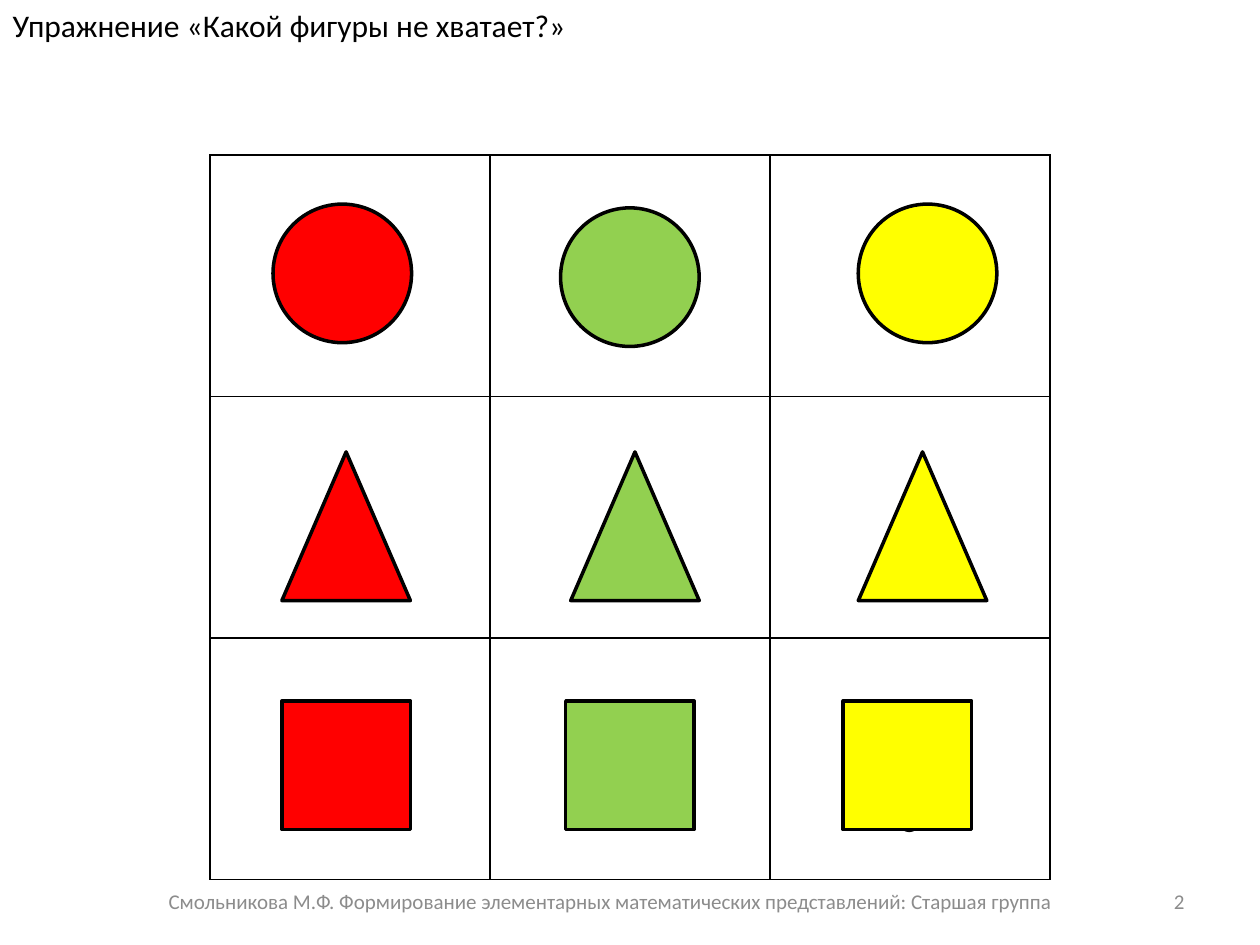
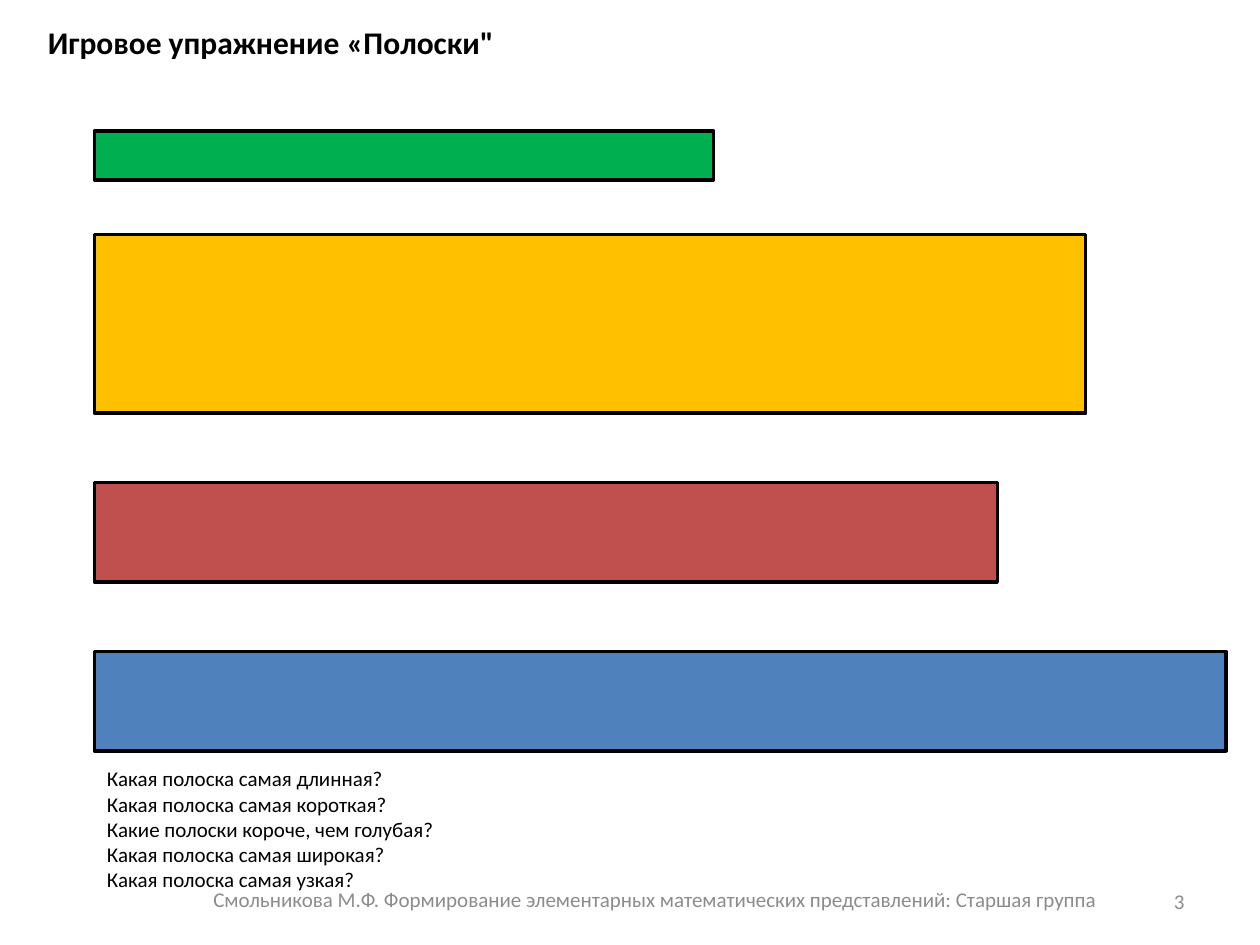
import pptx
import pptx.dml.color
import pptx.enum.shapes
import pptx.enum.text
import pptx.oxml
import pptx.oxml.ns
import pptx.util

SHAPES = pptx.enum.shapes.MSO_SHAPE
ALIGN = pptx.enum.text.PP_ALIGN
ANCHOR = pptx.enum.text.MSO_ANCHOR

COLOURS = {
    "ink": "000000", "footer": "8C8C8C",
    "red": "FF0000", "lime": "92D050", "yellow": "FFFF00",
    "green": "00B050", "amber": "FFC000", "brick": "C0504D", "blue": "4F81BD",
}
FONT = "Calibri"
FOOTER = ("Смольникова М.Ф. Формирование элементарных математических "
          "представлений: Старшая группа")

# The slide is a grid of 100 columns by 75 rows; boxes are left, top, width, height
COLUMNS, ROWS = 100, 75
WIDTH, HEIGHT = pptx.util.Inches(10), pptx.util.Inches(7.5)


def place(box):
    left, top, width, height = box
    return (round(left * WIDTH / COLUMNS), round(top * HEIGHT / ROWS),
            round(width * WIDTH / COLUMNS), round(height * HEIGHT / ROWS))


def colour(name):
    return pptx.dml.color.RGBColor.from_string(COLOURS[name])


def write(shape, lines, size=12, ink="ink", bold=False,
          align=ALIGN.LEFT, anchor=ANCHOR.TOP, wrap=True):
    frame = shape.text_frame
    frame_format = {"word_wrap": wrap, "vertical_anchor": anchor,
                    "auto_size": pptx.enum.text.MSO_AUTO_SIZE.NONE}
    for name, value in frame_format.items():
        setattr(frame, name, value)
    frame.text = "\n".join(lines)
    font_format = {"name": FONT, "size": pptx.util.Pt(size), "bold": bold}
    for paragraph in frame.paragraphs:
        paragraph.alignment = align
        for run in paragraph.runs:
            for name, value in font_format.items():
                setattr(run.font, name, value)
            run.font.color.rgb = colour(ink)


def add_text(slide, box, lines, **style):
    write(slide.shapes.add_textbox(*place(box)), lines, **style)


def add_figure(slide, kind, box, fill):
    shape = slide.shapes.add_shape(kind, *place(box))
    shape.shadow.inherit = False
    shape.fill.solid()
    shape.fill.fore_color.rgb = colour(fill)
    shape.line.color.rgb = colour("ink")
    shape.line.width = pptx.util.Pt(2)


def add_titled_slide(presentation, title, box, **style):
    slide = presentation.slides.add_slide(presentation.slide_layouts[5])
    placeholder = slide.shapes.title
    placeholder.left, placeholder.top, placeholder.width, placeholder.height = place(box)
    write(placeholder, [title], size=18, **style)
    return slide


def add_footer(slide, box, number):
    style = {"ink": "footer", "anchor": ANCHOR.MIDDLE}
    add_text(slide, box, [FOOTER], align=ALIGN.CENTER, **style)
    add_text(slide, (71.7, 69.5, 23.3, 4), [str(number)], align=ALIGN.RIGHT, **style)


def outline_cell(cell):
    cell.fill.background()
    properties = cell._tc.get_or_add_tcPr()
    for index, side in enumerate(("lnL", "lnR", "lnT", "lnB")):
        border = pptx.oxml.parse_xml(
            f'<a:{side} {pptx.oxml.ns.nsdecls("a")} w="{pptx.util.Pt(1)}"><a:solidFill>'
            f'<a:srgbClr val="{COLOURS["ink"]}"/></a:solidFill></a:{side}>')
        properties.insert(index, border)


def add_figure_grid(slide, box):
    left, top, width, height = box
    cell_width, cell_height = width / 3, height / 3
    table = slide.shapes.add_table(3, 3, *place(box)).table
    table.first_row = table.horz_banding = False
    for cell in table.iter_cells():
        outline_cell(cell)

    # The question mark lies under the last square
    add_text(slide, (left + 2 * cell_width + 7.4, top + 2 * cell_height + 1.5, 7.1, 17.2),
             ["?"], size=96)

    # Kind, width, height and the offsets inside the three cells of each row
    figure_rows = [
        (SHAPES.OVAL, 11, 11, [(5, 3.9), (5.6, 4.2), (7, 3.9)]),
        (SHAPES.ISOSCELES_TRIANGLE, 10.2, 11.8, [(5.7, 4.4), (6.4, 4.4), (7, 4.4)]),
        (SHAPES.RECTANGLE, 10.2, 10.2, [(5.7, 5), (6, 5), (5.8, 5)]),
    ]
    fills = ("red", "lime", "yellow")
    for row, (kind, figure_width, figure_height, offsets) in enumerate(figure_rows):
        for column, (fill, (across, down)) in enumerate(zip(fills, offsets)):
            add_figure(slide, kind,
                       (left + column * cell_width + across,
                        top + row * cell_height + down,
                        figure_width, figure_height), fill)


def add_strips(slide, box):
    left, top, width, height = box
    # Fill, distance from the top, length as a share of the box, thickness
    strips = [("green", 0, 0.547, 3.9), ("amber", 8.2, 0.876, 14.2),
              ("brick", 27.9, 0.798, 7.9), ("blue", height - 7.9, 1, 7.9)]
    for fill, down, share, thickness in strips:
        add_figure(slide, SHAPES.RECTANGLE,
                   (left, top + down, width * share, thickness), fill)


def build_missing_figure_slide(presentation):
    slide = add_titled_slide(presentation, "Упражнение «Какой фигуры не хватает?»",
                             (0, 0, 51.2, 4))
    add_figure_grid(slide, (16.67, 12.3, 66.67, 57.5))
    add_footer(slide, (2.8, 69.5, 91.3, 4), 2)


def build_strips_slide(presentation):
    slide = add_titled_slide(presentation, "Игровое упражнение «Полоски\"",
                             (2.8, 1.3, 37.7, 4), bold=True, wrap=False)
    add_strips(slide, (7.5, 10.4, 89.8, 49.2))
    add_text(slide, (7.5, 60.3, 74.8, 11.1), [
        "Какая полоска самая длинная?",
        "Какая полоска самая короткая?",
        "Какие полоски короче, чем голубая?",
        "Какая полоска самая широкая?",
        "Какая полоска самая узкая?",
    ])
    add_footer(slide, (6.7, 69.4, 90.6, 4), 3)


def main():
    presentation = pptx.Presentation()
    presentation.slide_width, presentation.slide_height = WIDTH, HEIGHT
    build_missing_figure_slide(presentation)
    build_strips_slide(presentation)
    presentation.save("out.pptx")


if __name__ == "__main__":
    main()
